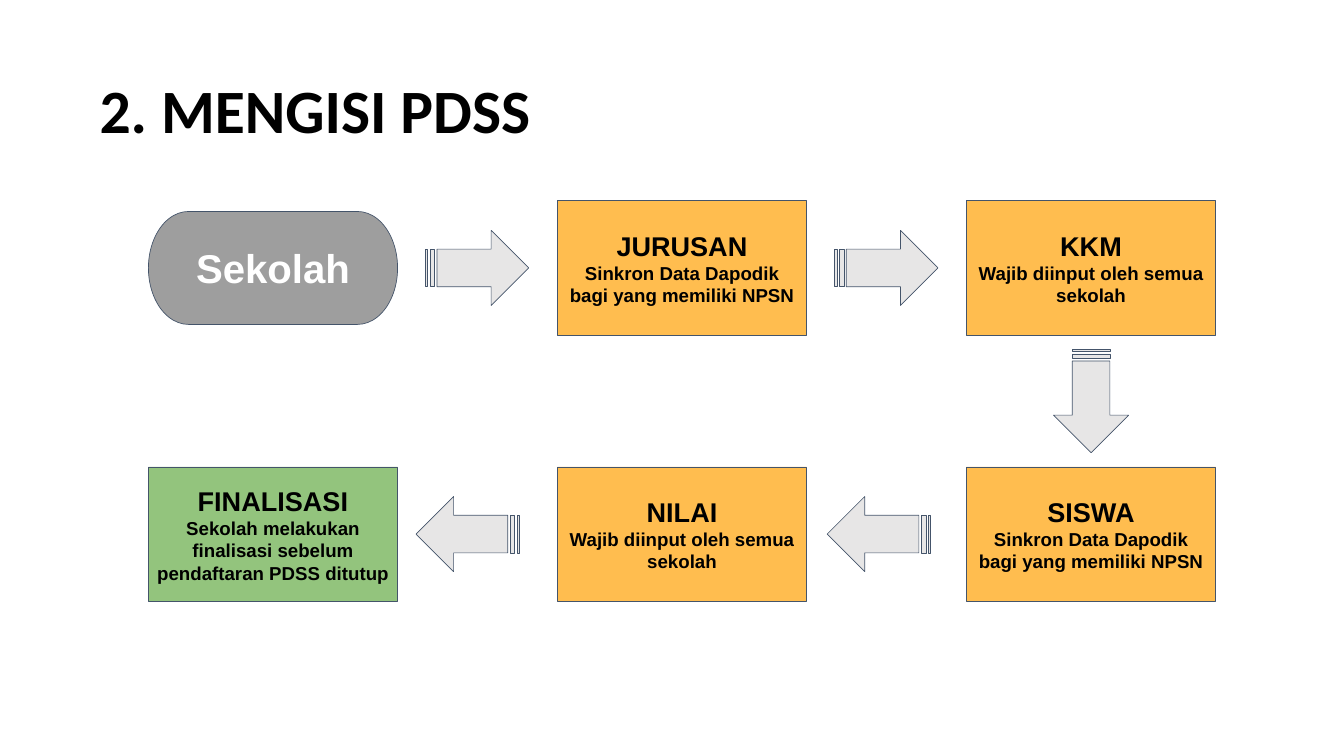
from dataclasses import dataclass

from pptx import Presentation
from pptx.dml.color import RGBColor
from pptx.enum.shapes import MSO_SHAPE as Preset
from pptx.enum.text import MSO_ANCHOR as Anchor, MSO_AUTO_SIZE as AutoSize, PP_ALIGN as Align
from pptx.util import Cm, Pt


@dataclass(frozen=True)
class Theme:
    black: str = "000000"
    white: str = "FFFFFF"
    outline: str = "44546A"
    start: str = "9E9E9E"
    step: str = "FFBD4F"
    finish: str = "93C47D"
    arrow: str = "E7E6E6"
    title_font: str = "Calibri"
    body_font: str = "Arial"
    title_size: int = 66
    start_size: int = 43
    heading_size: int = 29
    detail_size: int = 20


THEME = Theme()

LEFT, TOP = 5.61, 7.59
COLUMN_PITCH, ROW_PITCH = 15.46, 10.06
BOX_WIDTH, BOX_HEIGHT, START_HEIGHT = 9.42, 5.08, 4.27
ARROW_LENGTH, ARROW_HEIGHT = 3.91, 2.84

SYNC = "Sinkron Data Dapodik bagi yang memiliki NPSN"
REQUIRED = "Wajib diinput oleh semua sekolah"
FINALISE = "Sekolah melakukan finalisasi sebelum pendaftaran PDSS ditutup"

STEPS = [
    (1, 0, "JURUSAN", SYNC, THEME.step),
    (2, 0, "KKM", REQUIRED, THEME.step),
    (2, 1, "SISWA", SYNC, THEME.step),
    (1, 1, "NILAI", REQUIRED, THEME.step),
    (0, 1, "FINALISASI", FINALISE, THEME.finish),
]


def column_center(column):
    return LEFT + column * COLUMN_PITCH + BOX_WIDTH / 2


def row_center(row):
    return TOP + row * ROW_PITCH + BOX_HEIGHT / 2


def set_attributes(target, values):
    for name, value in values.items():
        setattr(target, name, value)


def format_text(paragraph, text, size, color, font=THEME.body_font, alignment=Align.CENTER):
    paragraph.text = text
    paragraph.alignment = alignment
    set_attributes(paragraph.font, {"name": font, "size": Pt(size), "bold": True})
    paragraph.font.color.rgb = RGBColor.from_string(color)


def add_title(slide, text):
    title = slide.shapes.title
    set_attributes(title, {"left": Cm(3.51), "top": Cm(1.52), "width": Cm(43.82), "height": Cm(5.51)})
    frame = title.text_frame
    set_attributes(frame, {"vertical_anchor": Anchor.MIDDLE, "auto_size": AutoSize.NONE})
    paragraph = frame.paragraphs[0]
    format_text(paragraph, text, THEME.title_size, THEME.black, THEME.title_font, Align.LEFT)
    paragraph.line_spacing = 0.9


def add_centered_shape(slide, preset, x, y, width, height, fill):
    shape = slide.shapes.add_shape(preset, Cm(x - width / 2), Cm(y - height / 2), Cm(width), Cm(height))
    shape.shadow.inherit = False
    shape.fill.solid()
    shape.fill.fore_color.rgb = RGBColor.from_string(fill)
    shape.line.color.rgb = RGBColor.from_string(THEME.outline)
    shape.line.width = Pt(0.75)
    return shape


def add_box(slide, preset, column, row, height, fill, lines):
    shape = add_centered_shape(slide, preset, column_center(column), row_center(row), BOX_WIDTH, height, fill)
    frame = shape.text_frame
    set_attributes(frame, {"word_wrap": True, "vertical_anchor": Anchor.MIDDLE})
    for side in ("left", "top", "right", "bottom"):
        setattr(frame, f"margin_{side}", Cm(0.25))
    for index, (text, size, color) in enumerate(lines):
        paragraph = frame.add_paragraph() if index else frame.paragraphs[0]
        format_text(paragraph, text, size, color)


def add_arrow(slide, x, y, rotation):
    arrow = add_centered_shape(
        slide, Preset.STRIPED_RIGHT_ARROW, x, y, ARROW_LENGTH, ARROW_HEIGHT, THEME.arrow
    )
    arrow.rotation = rotation


def main():
    presentation = Presentation()
    set_attributes(presentation, {"slide_width": Cm(50.8), "slide_height": Cm(28.58)})
    slide = presentation.slides.add_slide(presentation.slide_layouts[5])

    add_title(slide, "2. MENGISI PDSS")
    add_box(slide, Preset.FLOWCHART_TERMINATOR, 0, 0, START_HEIGHT, THEME.start,
            [("Sekolah", THEME.start_size, THEME.white)])
    for column, row, heading, detail, fill in STEPS:
        lines = [(heading, THEME.heading_size, THEME.black), (detail, THEME.detail_size, THEME.black)]
        add_box(slide, Preset.RECTANGLE, column, row, BOX_HEIGHT, fill, lines)

    arrows = [
        (18.03, row_center(0), 0),
        (33.5, row_center(0), 0),
        (column_center(2), row_center(0.5), 90),
        (33.22, row_center(1), 180),
        (17.68, row_center(1), 180),
    ]
    for x, y, rotation in arrows:
        add_arrow(slide, x, y, rotation)

    presentation.save("out.pptx")


if __name__ == "__main__":
    main()
